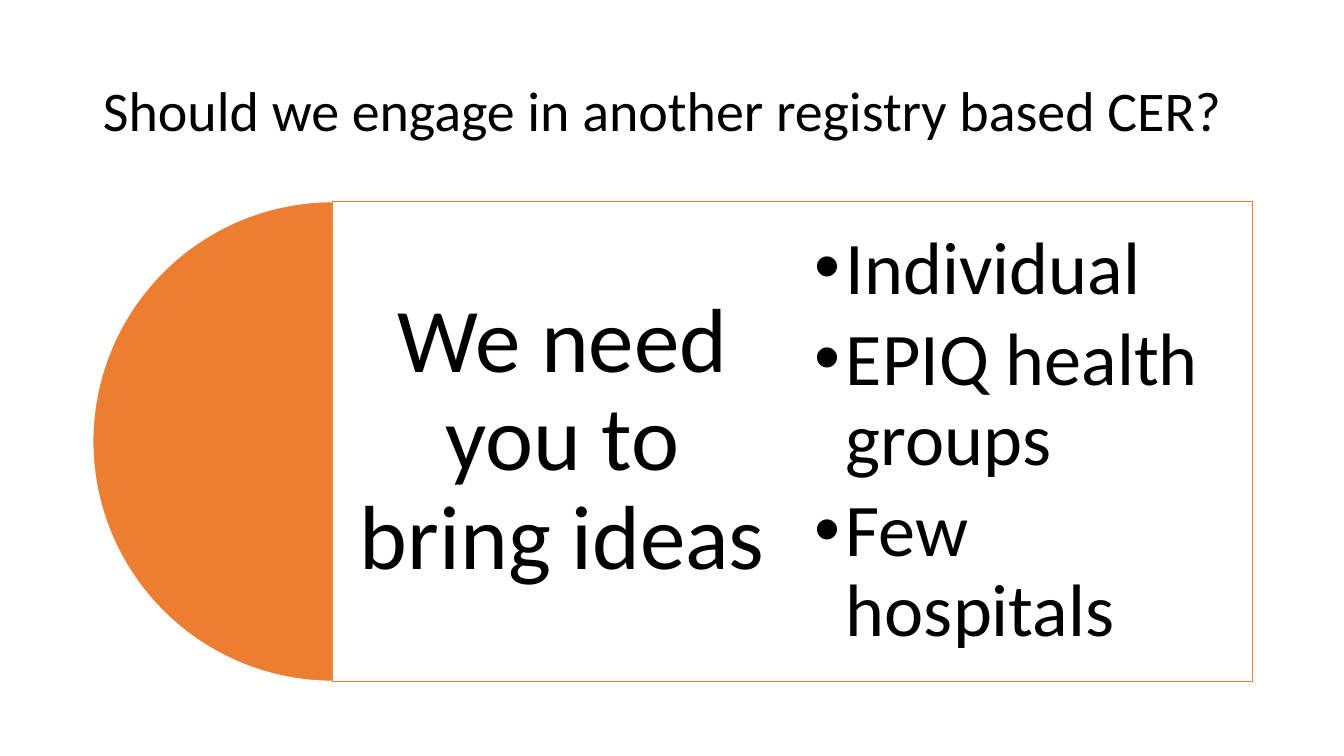
from lxml import etree
from pptx import Presentation
from pptx.dml.color import RGBColor
from pptx.enum.shapes import MSO_SHAPE
from pptx.enum.text import MSO_ANCHOR, MSO_AUTO_SIZE, PP_ALIGN
from pptx.oxml.ns import qn
from pptx.util import Inches, Pt

PIE, RECTANGLE = MSO_SHAPE.PIE, MSO_SHAPE.RECTANGLE
MIDDLE = MSO_ANCHOR.MIDDLE
NO_AUTOFIT = MSO_AUTO_SIZE.NONE
LEFT, CENTER = PP_ALIGN.LEFT, PP_ALIGN.CENTER

FONT = "Calibri"
BLACK, WHITE, ORANGE = "000000", "FFFFFF", "ED7D31"
MARGIN, TOP, WIDTH = 0.92, 2, 11.5
DIAMETER = 4.76
PANEL_LEFT = MARGIN + DIAMETER / 2
COLUMN = (WIDTH - DIAMETER / 2) / 2
IDEAS = ["Individual", "EPIQ health groups", "Few hospitals"]


def color(hex_value):
    return RGBColor.from_string(hex_value)


def place(shape, left, top, width, height):
    shape.left, shape.top = Inches(left), Inches(top)
    shape.width, shape.height = Inches(width), Inches(height)


def write(shape, lines, size, align=LEFT, inset=None, space_after=0):
    """Fill a shape with paragraphs; space_after is a share of the text size."""
    frame = shape.text_frame
    frame.word_wrap = True
    frame.auto_size = NO_AUTOFIT
    frame.vertical_anchor = MIDDLE
    if inset is not None:
        frame.margin_left = frame.margin_right = Inches(inset)
        frame.margin_top = frame.margin_bottom = Inches(inset)
    frame.text = "\n".join(lines)
    for para in frame.paragraphs:
        para.alignment = align
        para.line_spacing = 0.9
        para.space_before = Pt(0)
        para.space_after = Pt(size * space_after)
        para.font.name = FONT
        para.font.size = Pt(size)
        para.font.color.rgb = color(BLACK)


def add_bullets(shape, indent):
    for para in shape.text_frame.paragraphs:
        properties = para._p.get_or_add_pPr()
        properties.set("marL", str(Inches(indent)))
        properties.set("indent", str(-Inches(indent)))
        bullet = etree.Element(qn("a:buChar"), char="•")
        properties.find(qn("a:spcAft")).addnext(bullet)


def add_figure(page, kind, bounds, fill, line):
    figure = page.shapes.add_shape(kind, *map(Inches, bounds))
    figure.shadow.inherit = False
    figure.fill.solid()
    figure.fill.fore_color.rgb = color(fill)
    figure.line.color.rgb = color(line)
    figure.line.width = Pt(1)
    return figure


def set_opacity(figure, percent):
    fill_color = figure.element.spPr.find(qn("a:solidFill"))[0]
    etree.SubElement(fill_color, qn("a:alpha"), val=str(percent * 1000))


def main():
    deck = Presentation()
    deck.slide_width, deck.slide_height = Inches(13.33), Inches(7.5)
    page = deck.slides.add_slide(deck.slide_layouts[1])
    title, ideas = page.placeholders

    place(title, MARGIN, 0.4, WIDTH, 1.45)
    write(title, ["Should we engage in another registry based CER?"], 40)

    half_disc = add_figure(page, PIE, (MARGIN, TOP, DIAMETER, DIAMETER), ORANGE, WHITE)
    half_disc.adjustments[0] = 54
    half_disc.adjustments[1] = 162
    panel = add_figure(page, RECTANGLE, (PANEL_LEFT, TOP, 2 * COLUMN, DIAMETER), WHITE, ORANGE)
    set_opacity(panel, 90)

    bounds = (PANEL_LEFT, TOP, COLUMN, DIAMETER)
    appeal = page.shapes.add_textbox(*map(Inches, bounds))
    write(appeal, ["We need you to bring ideas"], 65, CENTER, 0.27, 0.35)

    place(ideas, PANEL_LEFT + COLUMN, TOP, COLUMN, DIAMETER)
    write(ideas, IDEAS, 53, LEFT, 0.22, 0.15)
    add_bullets(ideas, 0.31)
    # The list belongs in front of the panel.
    panel.element.getparent().append(ideas.element)

    deck.save("out.pptx")


if __name__ == "__main__":
    main()
